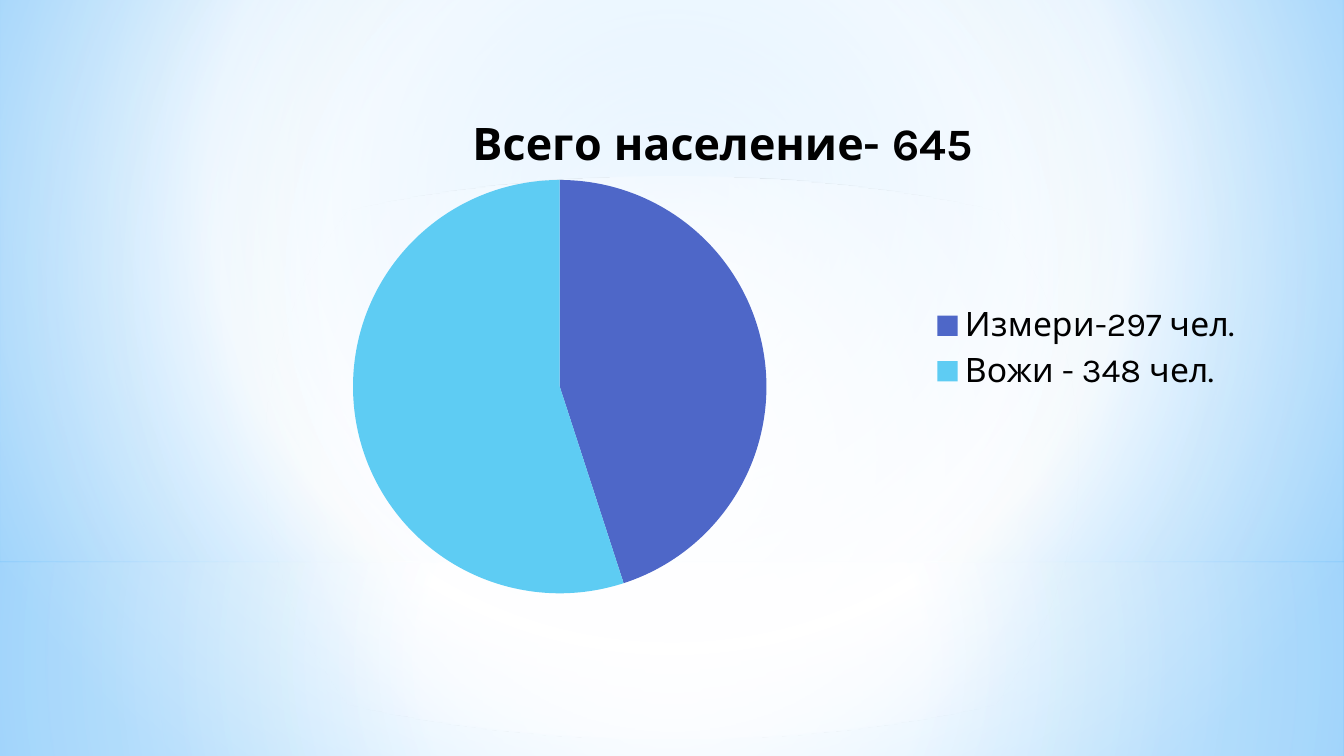
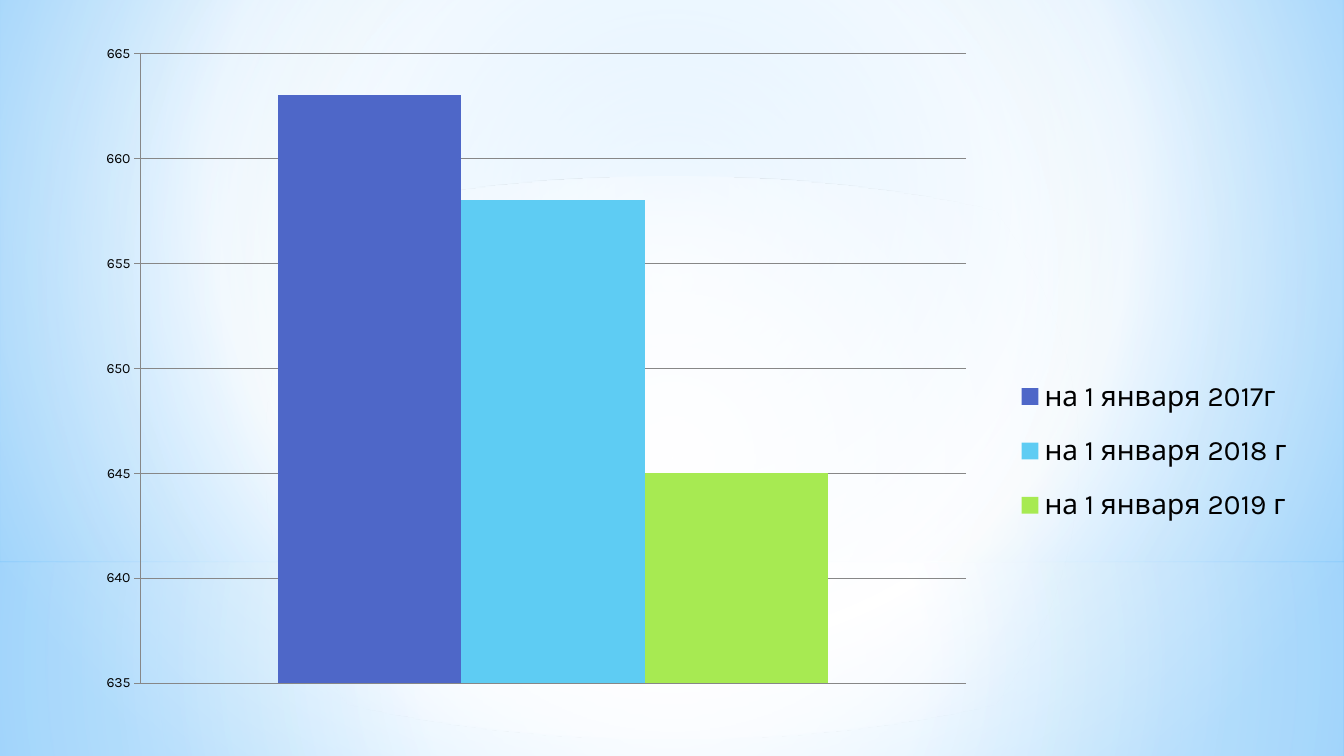
from dataclasses import dataclass

from lxml import etree
from pptx import Presentation
from pptx.chart.data import CategoryChartData
from pptx.dml.color import RGBColor
from pptx.enum.chart import XL_CHART_TYPE, XL_LEGEND_POSITION, XL_TICK_MARK
from pptx.enum.shapes import MSO_SHAPE
from pptx.oxml.ns import qn
from pptx.util import Inches, Pt

PIE = XL_CHART_TYPE.PIE
COLUMNS = XL_CHART_TYPE.COLUMN_CLUSTERED
LEGEND_RIGHT = XL_LEGEND_POSITION.RIGHT
TICK_OUTSIDE = XL_TICK_MARK.OUTSIDE
RECTANGLE = MSO_SHAPE.RECTANGLE
OVAL = MSO_SHAPE.OVAL

WIDTH, HEIGHT = Inches(13.33), Inches(7.5)
FONT = "Karla"
BLACK, WHITE, MIST, GREY = "000000", "FFFFFF", "B4DCFA", "878787"
PALETTE = ("4E67C8", "5ECCF3", "A7EA52")
CENTRE = (50, 50, 50, 50)


@dataclass(frozen=True)
class Stop:
    """A gradient stop; position and opacity are percentages."""

    position: int
    colour: str
    opacity: int = 100


@dataclass(frozen=True)
class Gradient:
    """A circular gradient around a focus, or a vertical one without it."""

    stops: tuple[Stop, ...]
    focus: tuple[int, ...] | None = CENTRE


@dataclass(frozen=True)
class Band:
    """A full-width backdrop shape; top and height are shares of the slide."""

    top: float
    height: float
    gradient: Gradient
    preset: MSO_SHAPE = RECTANGLE


@dataclass(frozen=True)
class ChartFrame:
    """A chart's place on the slide and its inner plot, as shares."""

    left: float
    top: float
    width: float
    height: float
    plot: tuple[float, ...]
    legend_size: int


BACKGROUND = Gradient(
    (Stop(0, "9ED5FF"), Stop(60, WHITE), Stop(100, "5BB9FF")), (20, 10, 20, 60)
)
HORIZON = 0.744
BANDS = (
    Band(HORIZON, 1 - HORIZON, Gradient(
        (Stop(0, WHITE, 91), Stop(37, WHITE, 76), Stop(100, MIST, 79)))),
    Band(0, HORIZON, Gradient(
        (Stop(0, WHITE, 89), Stop(48, WHITE, 62), Stop(100, MIST, 79)))),
    Band(0.55, 0.333, Gradient(
        (Stop(0, WHITE, 0), Stop(29, WHITE, 30), Stop(45, MIST, 40),
         Stop(55, WHITE, 26), Stop(65, MIST, 60), Stop(100, WHITE, 0)), None)),
    Band(0.233, HORIZON, Gradient((Stop(0, WHITE), Stop(56, WHITE, 0))), OVAL),
)
PIE_FRAME = ChartFrame(0.139, 0.105, 0.794, 0.712, (0.01, 0.187, 0.679, 0.768), 24)
COLUMN_FRAME = ChartFrame(0.037, 0.028, 0.934, 0.972, (0.072, 0.044, 0.658, 0.857), 20)


def rgb(colour: str) -> RGBColor:
    """Turn a hex string into a colour."""
    return RGBColor.from_string(colour)


def add_node(parent, tag: str, **attributes):
    """Append an XML child with the given attributes."""
    names = {name: str(value) for name, value in attributes.items()}
    return etree.SubElement(parent, qn(tag), names)


def apply_gradient(fill, element, gradient: Gradient) -> None:
    """Fill the element with the gradient."""
    fill.gradient()
    node = element.find(f".//{qn('a:gradFill')}")
    for child in list(node):
        node.remove(child)
    stop_list = add_node(node, "a:gsLst")
    for stop in gradient.stops:
        mark = add_node(stop_list, "a:gs", pos=stop.position * 1000)
        colour = add_node(mark, "a:srgbClr", val=stop.colour)
        if stop.opacity < 100:
            add_node(colour, "a:alpha", val=stop.opacity * 1000)
    if gradient.focus is None:
        add_node(node, "a:lin", ang=90 * 60000, scaled=0)
    else:
        path = add_node(node, "a:path", path="circle")
        sides = {side: share * 1000 for side, share in zip("ltrb", gradient.focus)}
        add_node(path, "a:fillToRect", **sides)


def add_backdrop_slide(deck):
    """Add a blank slide carrying the shared backdrop bands."""
    page = deck.slides.add_slide(deck.slide_layouts[6])
    for band in BANDS:
        shape = page.shapes.add_shape(
            band.preset, 0, round(band.top * HEIGHT), WIDTH, round(band.height * HEIGHT)
        )
        shape.shadow.inherit = False
        shape.line.fill.background()
        apply_gradient(shape.fill, shape.element, band.gradient)
    return page


def place_part(chart, tag: str, index: int, bounds: tuple[float, ...]) -> None:
    """Fix a chart part at x, y and optionally w, h, as shares of the chart."""
    part = chart.element.find(f".//{qn(tag)}")
    for old in part.findall(qn("c:layout")):
        part.remove(old)
    layout = etree.Element(qn("c:layout"))
    manual = add_node(layout, "c:manualLayout")
    if tag == "c:plotArea":
        add_node(manual, "c:layoutTarget", val="inner")
    for mode in ("c:xMode", "c:yMode"):
        add_node(manual, mode, val="edge")
    for name, share in zip("xywh", bounds):
        add_node(manual, f"c:{name}", val=share)
    part.insert(index, layout)


def add_styled_chart(page, kind, frame: ChartFrame, data: CategoryChartData):
    """Add a chart with the shared font, legend and plot placement."""
    chart = page.shapes.add_chart(
        kind, round(frame.left * WIDTH), round(frame.top * HEIGHT),
        round(frame.width * WIDTH), round(frame.height * HEIGHT), data,
    ).chart
    chart.has_title = False
    chart.has_legend = True
    chart.legend.position = LEGEND_RIGHT
    chart.legend.include_in_layout = False
    for font, size in ((chart.font, 10), (chart.legend.font, frame.legend_size)):
        style_font(font, size)
    place_part(chart, "c:plotArea", 0, frame.plot)
    return chart


def style_font(font, size: int) -> None:
    """Give a font the shared face and colour."""
    font.name, font.size = FONT, Pt(size)
    font.color.rgb = rgb(BLACK)


def paint(parts, colours: tuple[str, ...]) -> None:
    """Give each chart part its solid colour."""
    for part, colour in zip(parts, colours):
        part.format.fill.solid()
        part.format.fill.fore_color.rgb = rgb(colour)


def add_population_pie(deck) -> None:
    """Build the slide with the population split by village."""
    data = CategoryChartData()
    data.categories = ("Измери-297 чел.", "Вожи - 348 чел.")
    data.add_series("Series 1", (45, 55))
    chart = add_styled_chart(add_backdrop_slide(deck), PIE, PIE_FRAME, data)
    chart.plots[0].vary_by_categories = True
    points = chart.plots[0].series[0].points
    paint((points[index] for index in range(2)), PALETTE)
    chart.has_title = True
    paragraph = chart.chart_title.text_frame.paragraphs[0]
    paragraph.add_run().text = "Всего население- 645"
    style_font(paragraph.font, 32)
    paragraph.font.bold = True
    chart.chart_title.include_in_layout = False
    place_part(chart, "c:title", 1, (0.26, 0.05))


def add_yearly_columns(deck) -> None:
    """Build the slide with the population by year."""
    data = CategoryChartData()
    data.categories = ("1",)
    for name, count in (
        ("на 1 января 2017г", 663),
        ("на 1 января 2018 г", 658),
        ("на 1 января 2019 г", 645),
    ):
        data.add_series(name, (count,))
    chart = add_styled_chart(add_backdrop_slide(deck), COLUMNS, COLUMN_FRAME, data)
    plot = chart.plots[0]
    plot.vary_by_categories = False
    plot.gap_width, plot.overlap = 150, 0
    paint(plot.series, PALETTE)
    place_part(chart, "c:legend", 1, (0.77, 0.46, 0.22, 0.25))
    chart.category_axis.visible = False
    axis = chart.value_axis
    axis.minimum_scale, axis.maximum_scale, axis.major_unit = 635, 665, 5
    axis.major_tick_mark = TICK_OUTSIDE
    axis.has_major_gridlines = True
    for line in (axis.format.line, axis.major_gridlines.format.line):
        line.color.rgb = rgb(GREY)
        line.width = Pt(0.75)


def main() -> None:
    """Build and save the deck."""
    deck = Presentation()
    deck.slide_width, deck.slide_height = WIDTH, HEIGHT
    master = deck.slide_master
    apply_gradient(master.background.fill, master.element, BACKGROUND)
    add_population_pie(deck)
    add_yearly_columns(deck)
    deck.save("out.pptx")


if __name__ == "__main__":
    main()
